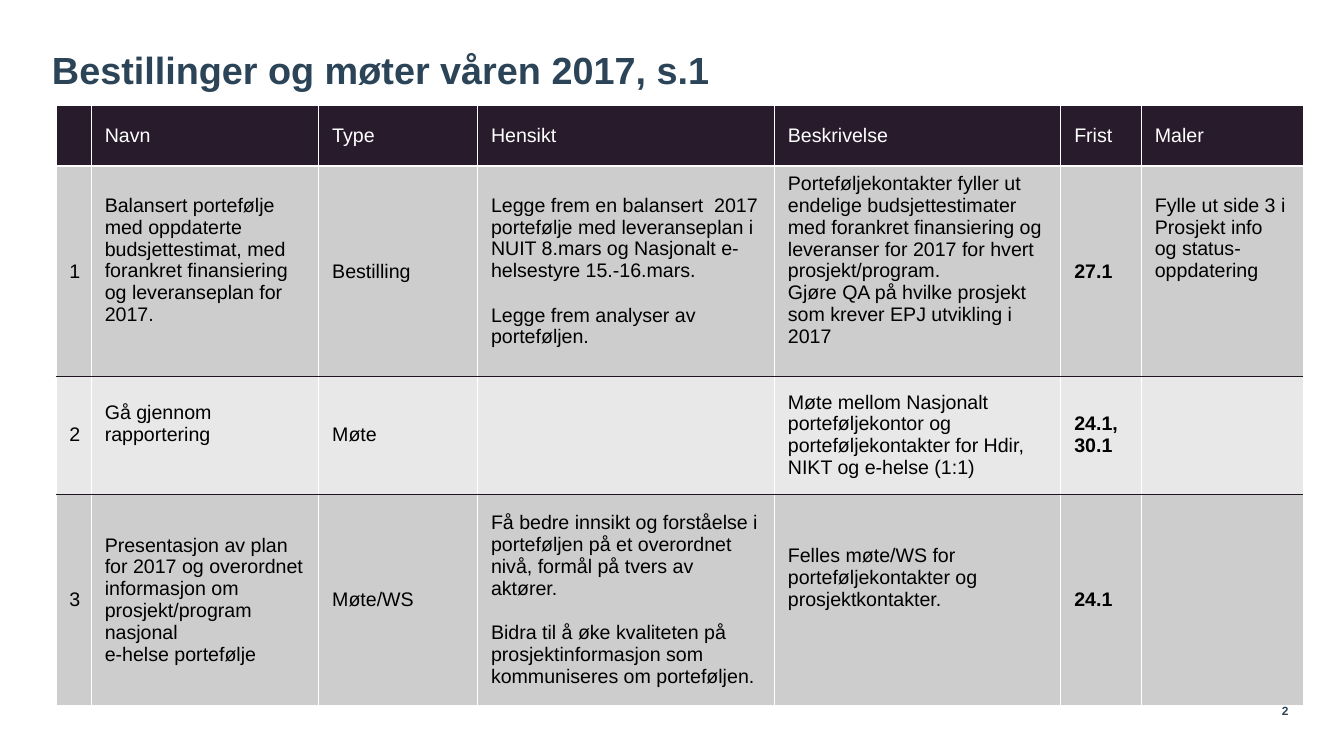
from dataclasses import dataclass

from lxml import etree
from pptx import Presentation
from pptx.dml.color import RGBColor
from pptx.enum.text import MSO_ANCHOR, MSO_AUTO_SIZE, PP_ALIGN
from pptx.oxml.ns import qn
from pptx.util import Cm, Pt

TOP, MID = MSO_ANCHOR.TOP, MSO_ANCHOR.MIDDLE
LEFT, RIGHT = PP_ALIGN.LEFT, PP_ALIGN.RIGHT
FIXED = MSO_AUTO_SIZE.NONE


@dataclass(frozen=True)
class Theme:
    font: str = "Arial"
    head: str = "2C4457"
    dark: str = "281C2C"
    rule: str = "1E1521"
    odd: str = "CDCDCD"
    even: str = "E8E8E8"
    white: str = "FFFFFF"
    black: str = "000000"
    title: float = 54
    body: float = 28
    small: float = 17


THEME = Theme()
LINE = 1.11  # height of one body line, cm
GAP = Pt(32)  # gap between groups of text in a cell
BARE = dict(margin_left=0, margin_top=0, margin_right=0, margin_bottom=0,
            word_wrap=True, auto_size=FIXED)
PAD = dict(margin_left=Cm(0.68), margin_right=Cm(0.68),
           margin_top=Cm(0.33), vertical_anchor=MID)

COLS = [1.78, 11.46, 8, 14.96, 14.43, 4.06, 8.15]
ROWS = [3.05, 10.5, 5.94, 10.67]
DATE = 5  # column set in bold
HEADS = ["", "Navn", "Type", "Hensikt", "Beskrivelse", "Frist", "Maler"]
# Each cell is a list of paragraphs
ITEMS = [
    [["1"],
     ["Balansert portefølje med oppdaterte budsjettestimat, med forankret "
      "finansiering og leveranseplan for 2017."],
     ["Bestilling"],
     ["Legge frem en balansert  2017 portefølje med leveranseplan i NUIT "
      "8.mars og Nasjonalt e-helsestyre 15.-16.mars.",
      "Legge frem analyser av porteføljen."],
     ["Porteføljekontakter fyller ut endelige budsjettestimater med "
      "forankret finansiering og leveranser for 2017 for hvert "
      "prosjekt/program.",
      "Gjøre QA på hvilke prosjekt som krever EPJ utvikling i 2017"],
     ["27.1"],
     ["Fylle ut side 3 i Prosjekt info og status-oppdatering"]],
    [["2"], ["Gå gjennom rapportering"], ["Møte"], [],
     ["Møte mellom Nasjonalt porteføljekontor og porteføljekontakter for "
      "Hdir, NIKT og e-helse (1:1)"],
     ["24.1, 30.1"], []],
    [["3"],
     ["Presentasjon av plan for 2017 og overordnet informasjon om "
      "prosjekt/program nasjonal", "e-helse portefølje"],
     ["Møte/WS"],
     ["Få bedre innsikt og forståelse i porteføljen på et overordnet nivå, "
      "formål på tvers av aktører.",
      "Bidra til å øke kvaliteten på prosjektinformasjon som kommuniseres "
      "om porteføljen."],
     ["Felles møte/WS for porteføljekontakter og prosjektkontakter."],
     ["24.1"], []],
]
AIM = 3  # column with spaced paragraphs
# Lines of free room under the text, by row and column
ROOM = {(1, 1): 1, (1, 4): 1, (1, 6): 3, (2, 1): 1, (3, 4): 2}


def apply(part, **vals):
    for name, val in vals.items():
        setattr(part, name, val)


def style(para, size, color, bold=False, **vals):
    apply(para, **vals)
    apply(para.font, name=THEME.font, size=Pt(size), bold=bold)
    para.font.color.rgb = RGBColor.from_string(color)


def write(frame, texts, size, color, bold=False, gap=0):
    for i, text in enumerate(texts):
        para = frame.add_paragraph() if i else frame.paragraphs[0]
        para.text = text
        style(para, size, color, bold, space_before=gap if i else 0)


def edge(cell, lines):
    """Set the left, right, top and bottom borders of a cell."""
    props = cell._tc.get_or_add_tcPr()
    for i, (side, (color, width)) in enumerate(zip("LRTB", lines)):
        line = etree.Element(qn(f"a:ln{side}"), w=str(Pt(width)))
        fill = etree.SubElement(line, qn("a:solidFill"))
        etree.SubElement(fill, qn("a:srgbClr"), val=color)
        props.insert(i, line)


def add_title(slide, box, text):
    shape = slide.shapes.title
    apply(shape, **box)
    frame = shape.text_frame
    apply(frame, **BARE, vertical_anchor=TOP)
    frame.text = text
    style(frame.paragraphs[0], THEME.title, THEME.head, True,
          alignment=LEFT, line_spacing=0.9)


def add_plan(slide, box):
    rows = [[[head] if head else [] for head in HEADS]] + ITEMS
    grid = slide.shapes.add_table(len(rows), len(COLS), **box).table
    apply(grid, first_row=False, horz_banding=False)
    for col, width in zip(grid.columns, COLS):
        col.width = Cm(width)
    for row, height in zip(grid.rows, ROWS):
        row.height = Cm(height)

    thin, thick = (THEME.white, 1), (THEME.white, 3)
    rule = (THEME.rule, 1.5)
    below = [thick, rule, rule, thin]
    above = [thin, thin, rule, rule]
    fills = [THEME.dark, THEME.odd, THEME.even, THEME.odd]
    for r, row in enumerate(rows):
        for c, texts in enumerate(row):
            cell = grid.cell(r, c)
            room = ROOM.get((r, c), 0) * LINE
            apply(cell, **PAD, margin_bottom=Cm(0.33 + room))
            cell.fill.solid()
            cell.fill.fore_color.rgb = RGBColor.from_string(fills[r])
            edge(cell, [thin, thin, above[r], below[r]])
            write(cell.text_frame, texts or [""], THEME.body,
                  THEME.black if r else THEME.white,
                  bold=r > 0 and c == DATE, gap=GAP if c == AIM else 0)


def add_page(slide, box, text):
    frame = slide.shapes.add_textbox(**box).text_frame
    apply(frame, **BARE, vertical_anchor=MID)
    frame.text = text
    style(frame.paragraphs[0], THEME.small, THEME.head, True, alignment=RIGHT)


def area(left, top, width, height):
    return dict(left=Cm(left), top=Cm(top), width=Cm(width), height=Cm(height))


def main():
    deck = Presentation()
    apply(deck, slide_width=Cm(67.72), slide_height=Cm(38.1))
    slide = deck.slides.add_slide(deck.slide_layouts[5])
    add_page(slide, area(63.2, 35.33, 1.73, 1.02), "2")
    add_plan(slide, area(2.82, 5.33, sum(COLS), sum(ROWS)))
    add_title(slide, area(2.62, 2.59, 36.4, 4.01),
              "Bestillinger og møter våren 2017, s.1")
    deck.save("out.pptx")


if __name__ == "__main__":
    main()
